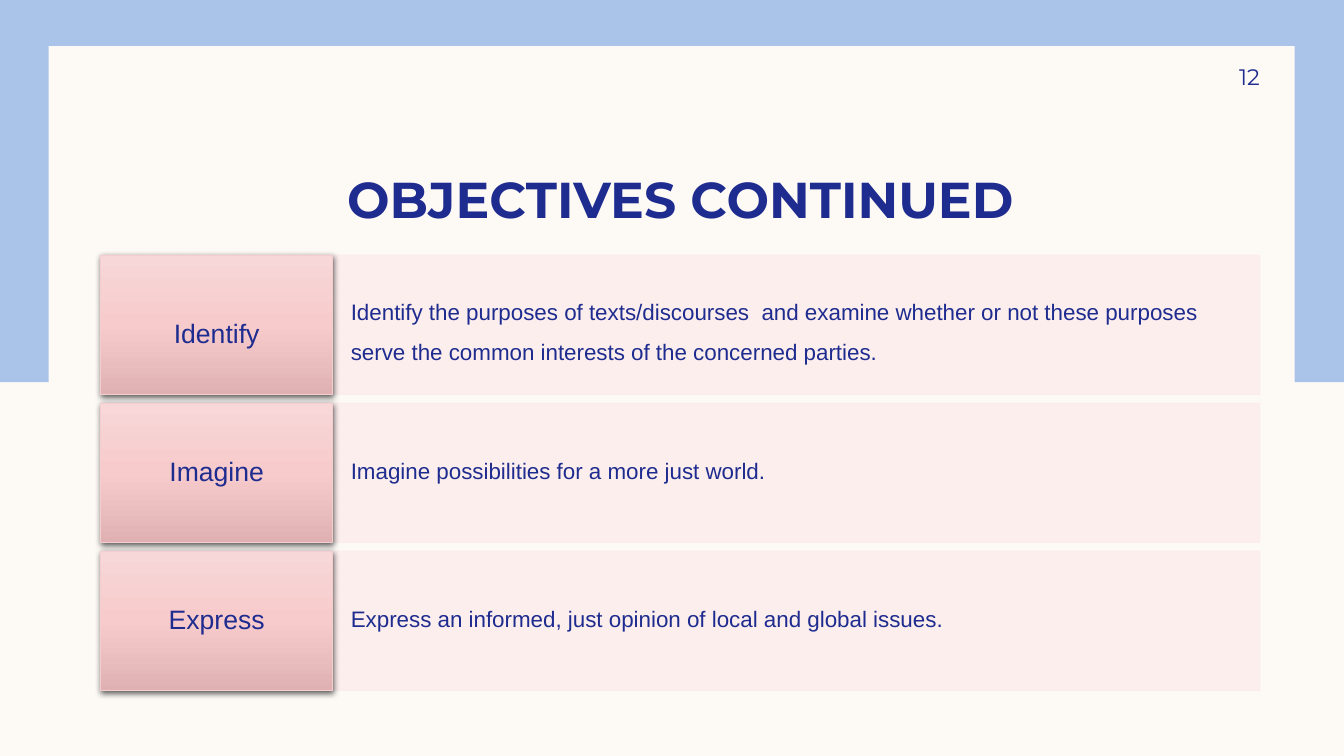
from pptx import Presentation
from pptx.dml.color import RGBColor
from pptx.enum import shapes, text
from pptx.oxml import parse_xml
from pptx.oxml.ns import nsdecls, qn
from pptx.util import Pt

CREAM = RGBColor(0xFD, 0xFA, 0xF6)
SKY = RGBColor(0xAA, 0xC3, 0xE8)
NAVY = RGBColor(0x1F, 0x2C, 0x8F)
BLUSH = RGBColor(0xFB, 0xED, 0xED)
ROSE = RGBColor(0xF5, 0xCD, 0xCE)
ROSE_STOPS = [
    (0, RGBColor(0xF7, 0xD7, 0xD8)),
    (50, RGBColor(0xF7, 0xCB, 0xCC)),
    (100, RGBColor(0xDF, 0xB1, 0xB2)),
]

LEFT, CENTER, RIGHT = (
    text.PP_ALIGN.LEFT, text.PP_ALIGN.CENTER, text.PP_ALIGN.RIGHT)
MIDDLE, BOTTOM = text.MSO_ANCHOR.MIDDLE, text.MSO_ANCHOR.BOTTOM


class Deck:
    """Holds the style and the current slide; lengths are in points."""

    heading_font = "Montserrat"
    body_font = "Arial"
    ink = NAVY

    def __init__(self, s):
        self.s = s

    def set_text(self, sp, words, size, font, align=LEFT, anchor=MIDDLE,
                 insets=(0, 0, 0, 0), bold=False, spacing=1.0):
        tf = sp.text_frame
        left, top, right, bottom = (Pt(v) for v in insets)
        frame = {
            "word_wrap": True, "auto_size": text.MSO_AUTO_SIZE.NONE,
            "vertical_anchor": anchor,
            "margin_left": left, "margin_top": top,
            "margin_right": right, "margin_bottom": bottom,
        }
        p = tf.paragraphs[0]
        r = p.add_run()
        r.text = words
        r.font.color.rgb = self.ink
        formats = (
            (tf, frame),
            (p, {"alignment": align, "line_spacing": spacing}),
            (r.font, {"name": font, "size": Pt(size), "bold": bold}),
        )
        for target, values in formats:
            for key, value in values.items():
                setattr(target, key, value)

    def title(self, box, words):
        sp = self.s.shapes.title
        sp.left, sp.top, sp.width, sp.height = (Pt(v) for v in box)
        self.set_text(sp, words, 36, self.heading_font, CENTER, BOTTOM,
                      (7.2, 0, 7.2, 0), bold=True)

    def label(self, box, words, size, align, insets):
        sp = self.s.shapes.add_textbox(*(Pt(v) for v in box))
        self.set_text(sp, words, size, self.heading_font, align,
                      insets=insets)

    def rect(self, box, fill=None, line=None):
        sp = self.s.shapes.add_shape(
            shapes.MSO_SHAPE.RECTANGLE, *(Pt(v) for v in box))
        sp.shadow.inherit = False
        if fill is not None:
            sp.fill.solid()
            sp.fill.fore_color.rgb = fill
        if line is None:
            sp.line.fill.background()
        else:
            sp.line.color.rgb = line
            sp.line.width = Pt(0.5)
        return sp

    def panel(self, box, words, spacing):
        sp = self.rect(box, BLUSH, BLUSH)
        # 90 % opacity for both the fill and the outline
        for clr in sp._element.spPr.iter(qn("a:srgbClr")):
            clr.append(parse_xml(f'<a:alpha {nsdecls("a")} val="90000"/>'))
        self.set_text(sp, words, 16, self.body_font,
                      insets=(13, 25.2, 13, 25.2), spacing=spacing)

    def tile(self, box, words, spacing):
        sp = self.rect(box, line=ROSE)
        stops = "".join(
            f'<a:gs pos="{pos * 1000}"><a:srgbClr val="{color}"/></a:gs>'
            for pos, color in ROSE_STOPS)
        sp_pr = sp._element.spPr
        sp_pr.find(qn("a:prstGeom")).addnext(parse_xml(
            f'<a:gradFill {nsdecls("a")} rotWithShape="1">'
            f'<a:gsLst>{stops}</a:gsLst>'
            '<a:lin ang="5400000" scaled="0"/></a:gradFill>'))
        sp_pr.find(qn("a:effectLst")).append(parse_xml(
            f'<a:outerShdw {nsdecls("a")} blurRad="{Pt(4.5)}" '
            f'dist="{Pt(1.5)}" dir="5400000" algn="ctr" rotWithShape="0">'
            '<a:srgbClr val="000000"><a:alpha val="63000"/></a:srgbClr>'
            '</a:outerShdw>'))
        self.set_text(sp, words, 19, self.body_font, CENTER,
                      insets=(8.6, 10, 8.6, 10), spacing=spacing)


OBJECTIVES = [
    ("Identify", "Identify the purposes of texts/discourses  and examine "
     "whether or not these purposes serve the common interests of the "
     "concerned parties.", 1.5),
    ("Imagine", "Imagine possibilities for a more just world.", 0.9),
    ("Express", "Express an informed, just opinion of local and global "
     "issues.", 0.9),
]


def main():
    prs = Presentation()
    prs.slide_width, prs.slide_height = Pt(960), Pt(540)
    s = prs.slides.add_slide(prs.slide_layouts[5])
    s.background.fill.solid()
    s.background.fill.fore_color.rgb = CREAM
    deck = Deck(s)

    # Blue band with the cream page over it
    deck.rect((0, 0, 960, 272.9), SKY)
    deck.rect((34.8, 33, 890, 474.5), CREAM)

    # Title, brought in front of the band
    deck.title((72, 83.5, 828, 80), "OBJECTIVES CONTINUED")
    s.shapes._spTree.append(s.shapes.title._element)

    # One row per objective: a panel and its tile
    left, top, pitch, height = 72, 182.2, 105.7, 99.6
    tile_width, panel_width = 165.6, 662.4
    for i, (name, detail, spacing) in enumerate(OBJECTIVES):
        y = top + i * pitch
        deck.panel((left + tile_width, y, panel_width, height),
                   detail, spacing)
        deck.tile((left, y, tile_width, height), name, spacing)

    # Page number
    deck.label((815.8, 36, 84.2, 37.4), "12", 16, RIGHT, (7.2, 3.6, 0, 3.6))

    prs.save("out.pptx")


if __name__ == "__main__":
    main()
